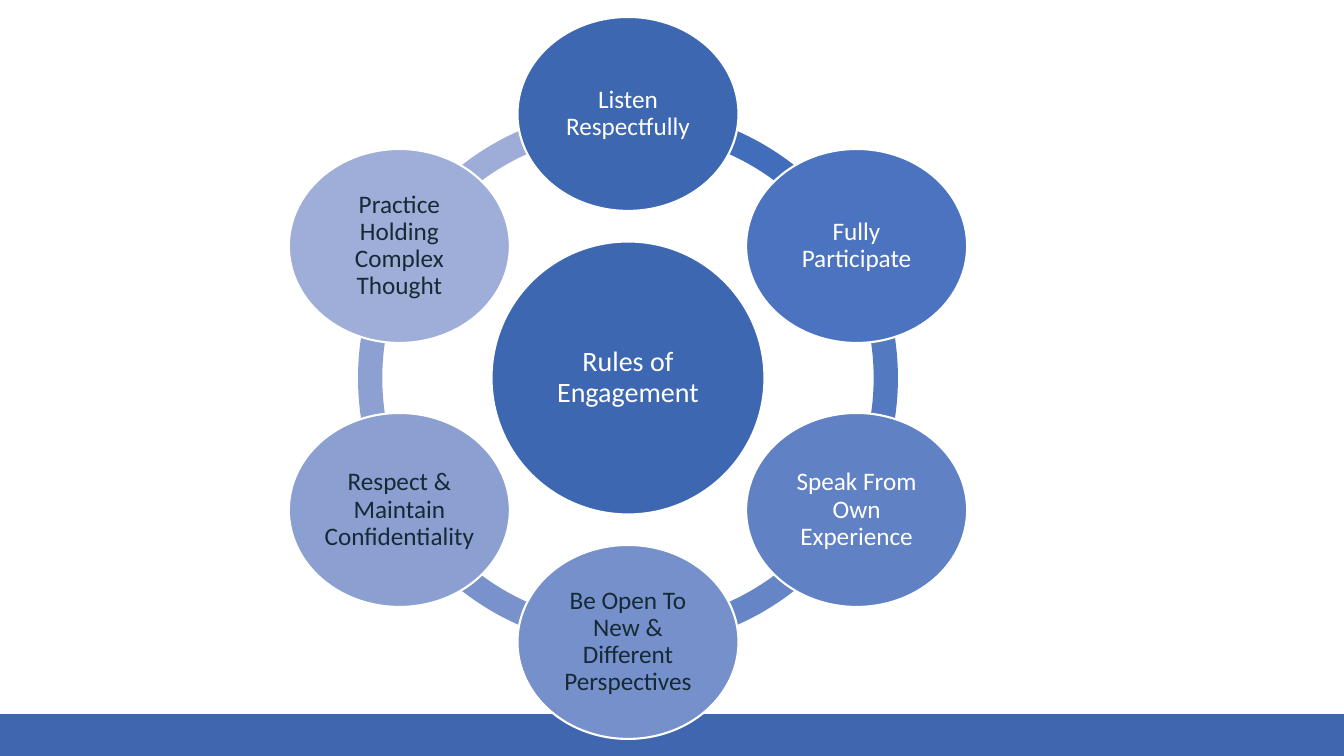
from math import cos, radians, sin

from pptx import Presentation
from pptx.dml.color import RGBColor
from pptx.enum.shapes import MSO_SHAPE
from pptx.enum.text import MSO_ANCHOR, PP_ALIGN
from pptx.util import Pt

RECTANGLE = MSO_SHAPE.RECTANGLE
ELLIPSE = MSO_SHAPE.OVAL
BLOCK_ARC = MSO_SHAPE.BLOCK_ARC
CENTER = PP_ALIGN.CENTER
MIDDLE = MSO_ANCHOR.MIDDLE

SLIDE_WIDTH, SLIDE_HEIGHT = 1344, 756
EMU_PER_PX = 12192000 / SLIDE_WIDTH
COLORS = {"bar": "3F66AE", "hub": "3E67B2", "light": "FFFFFF", "dark": "152A35"}

# Ring geometry
CENTER_X, CENTER_Y = 628, 378
RING_SIZE, HUB_SIZE = 540, 273
ORBIT = 264
NODE_WIDTH, NODE_HEIGHT = 221, 194
RING_THICKNESS = 0.045
ADJUST_PER_DEGREE = 0.6  # 60000 angle units per degree, 100000 per adjustment
STEP = 60

# Rule, node fill, text colour, fill of the arc that follows clockwise
RULES = [
    ("Listen Respectfully", "3E67B2", "light", "416DBB"),
    ("Fully Participate", "4C73BF", "light", "5379C1"),
    ("Speak From Own Experience", "6181C5", "light", "6685C7"),
    ("Be Open To New & Different Perspectives", "7690CB", "dark", "7992CC"),
    ("Respect & Maintain Confidentiality", "8B9FD1", "dark", "8CA0D2"),
    ("Practice Holding Complex Thought", "9FAED8", "dark", "9EADD8"),
]


def px(length):
    return round(length * EMU_PER_PX)


def write_text(shape, text, *, size, color, font="Calibri", inset=2, spacing=0.9):
    frame = shape.text_frame
    frame.word_wrap = True
    frame.vertical_anchor = MIDDLE
    frame.margin_left = frame.margin_right = px(inset)
    frame.margin_top = frame.margin_bottom = px(inset)
    paragraph = frame.paragraphs[0]
    paragraph.alignment = CENTER
    paragraph.line_spacing = spacing
    run = paragraph.add_run()
    run.text = text
    run.font.name = font
    run.font.size = Pt(size)
    run.font.color.rgb = RGBColor.from_string(color)


class RingSlide:
    def __init__(self, slide):
        self.slide = slide
        self.outline = RGBColor.from_string(COLORS["light"])

    def shape(self, kind, left, top, width, height, fill):
        shape = self.slide.shapes.add_shape(
            kind, px(left), px(top), px(width), px(height))
        shape.shadow.inherit = False
        shape.fill.solid()
        shape.fill.fore_color.rgb = RGBColor.from_string(fill)
        shape.line.fill.background()
        return shape

    def bar(self, top, height):
        self.shape(RECTANGLE, 0, top, SLIDE_WIDTH, height, COLORS["bar"])

    def arc(self, start, end, fill):
        arc = self.shape(BLOCK_ARC, CENTER_X - RING_SIZE // 2,
                         CENTER_Y - RING_SIZE // 2, RING_SIZE, RING_SIZE, fill)
        arc.adjustments[0] = start % 360 * ADJUST_PER_DEGREE
        arc.adjustments[1] = end % 360 * ADJUST_PER_DEGREE
        arc.adjustments[2] = RING_THICKNESS

    def circle(self, text, x, y, width, height, fill, color, size):
        circle = self.shape(ELLIPSE, x - width / 2, y - height / 2,
                            width, height, fill)
        circle.line.color.rgb = self.outline
        circle.line.width = Pt(1.5)
        write_text(circle, text, size=size, color=color)


def main():
    deck = Presentation()
    deck.slide_width, deck.slide_height = px(SLIDE_WIDTH), px(SLIDE_HEIGHT)
    ring = RingSlide(deck.slides.add_slide(deck.slide_layouts[6]))

    # Footer bar
    ring.bar(714, 46)

    # Angles run clockwise from the right, so the top is at -90
    placed_rules = [(STEP * i - 90, *rule) for i, rule in enumerate(RULES)]

    # Connecting arcs, last one at the back
    for angle, _, _, _, arc_fill in reversed(placed_rules):
        ring.arc(angle, angle + STEP, arc_fill)

    # Hub
    ring.circle("Rules of Engagement", CENTER_X, CENTER_Y, HUB_SIZE, HUB_SIZE,
                COLORS["hub"], COLORS["light"], 20)

    # Rules around the hub
    for angle, rule, fill, tone, _ in placed_rules:
        x = CENTER_X + ORBIT * cos(radians(angle))
        y = CENTER_Y + ORBIT * sin(radians(angle))
        ring.circle(rule, x, y, NODE_WIDTH, NODE_HEIGHT, fill, COLORS[tone], 18)

    deck.save("out.pptx")


if __name__ == "__main__":
    main()
